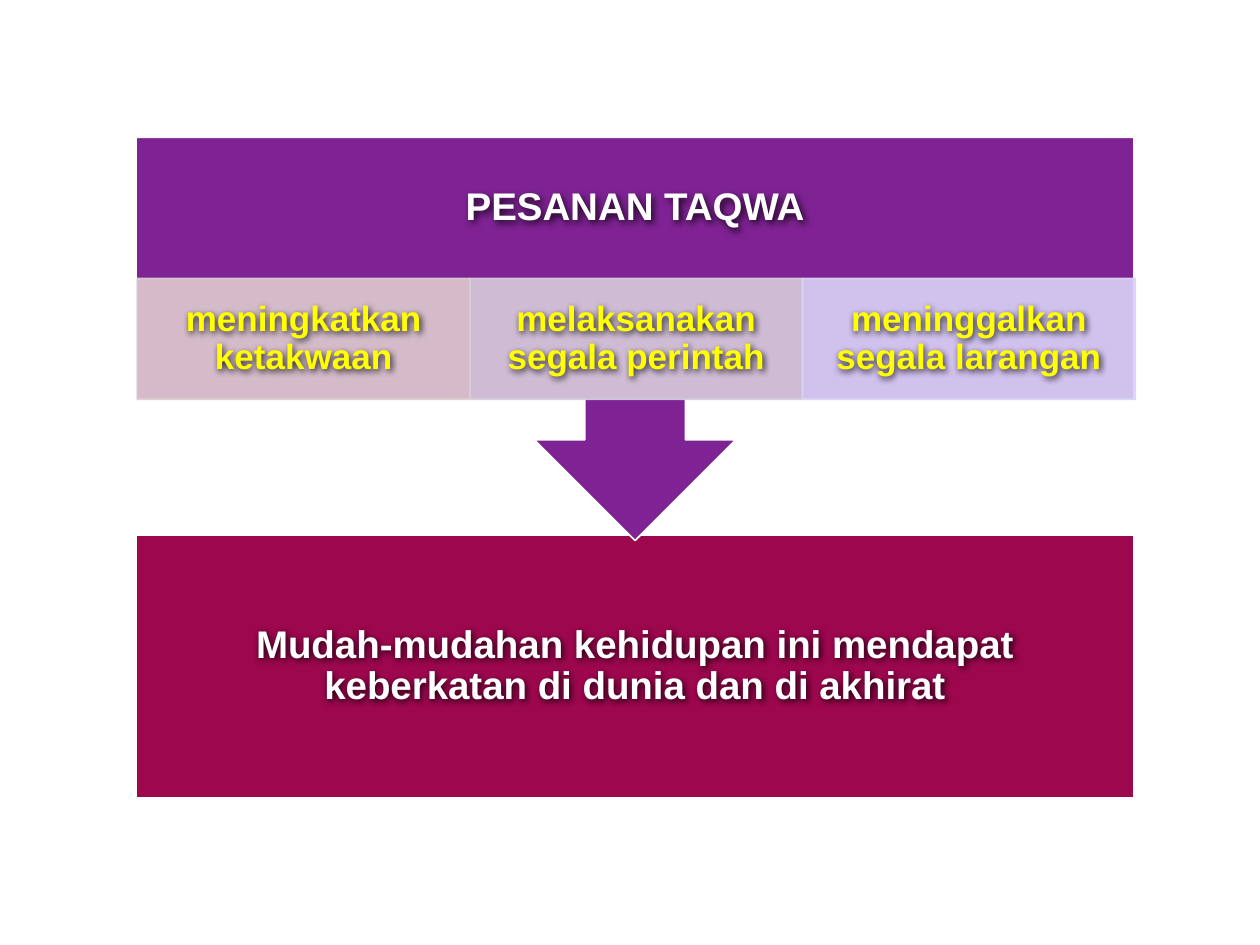
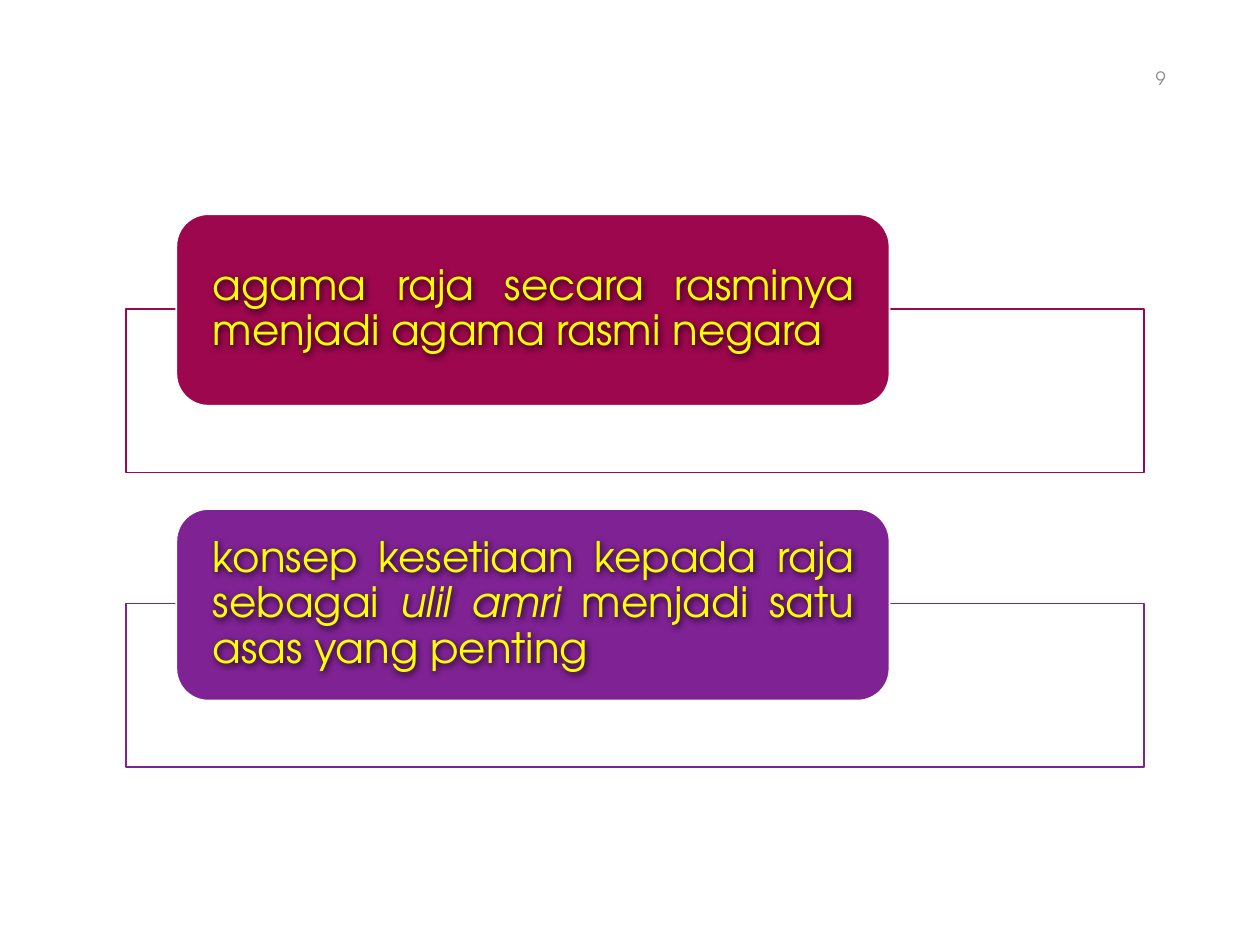
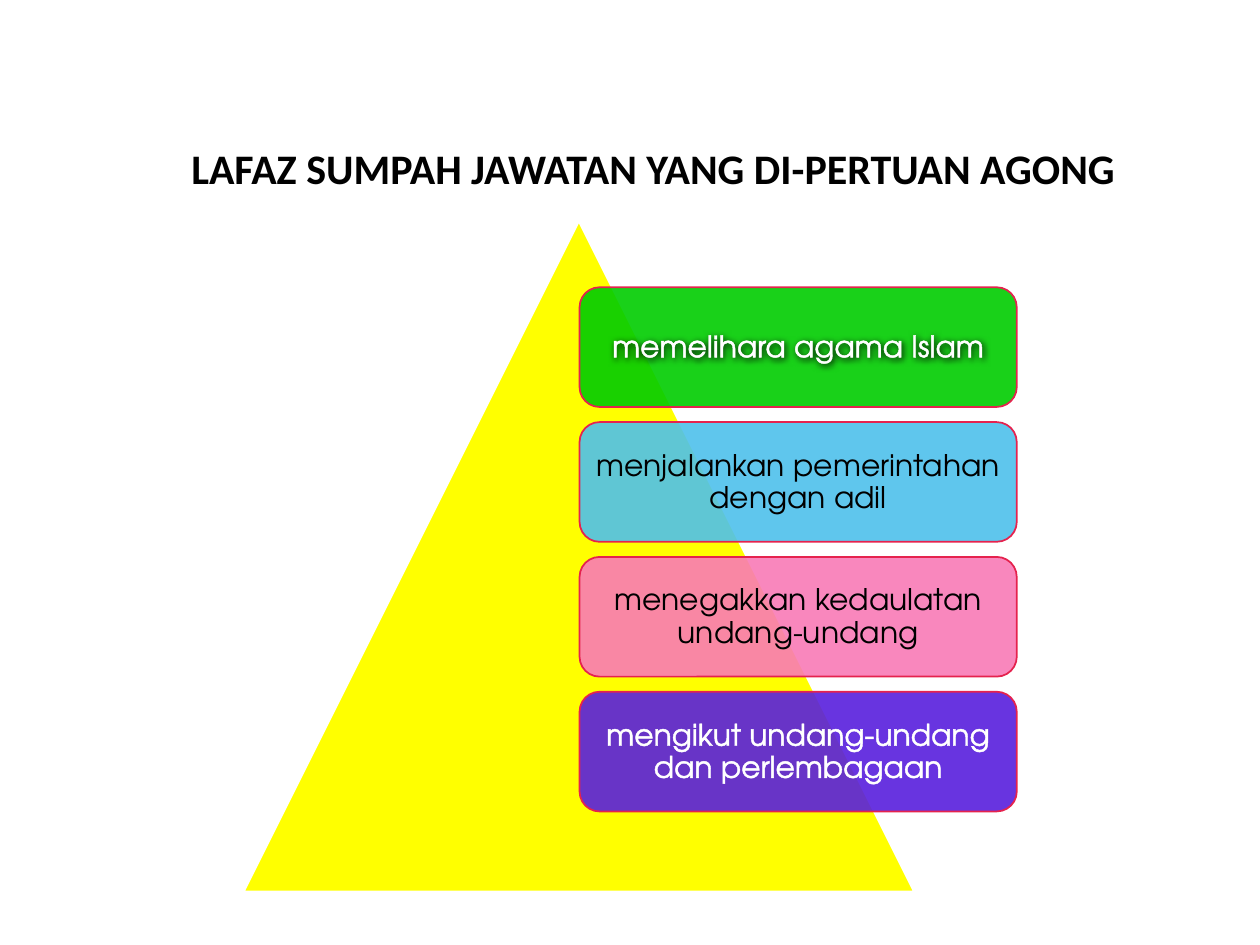
from lxml.etree import SubElement
from pptx import Presentation
from pptx.dml.color import RGBColor
from pptx.enum.shapes import MSO_SHAPE
from pptx.enum.text import MSO_ANCHOR, PP_ALIGN
from pptx.oxml.ns import qn
from pptx.util import Emu, Pt

# Shared style: 100 px to the inch
PX = 9144
WHITE = RGBColor(0xFF, 0xFF, 0xFF)
BLACK = RGBColor(0x00, 0x00, 0x00)
YELLOW = RGBColor(0xFF, 0xFF, 0x00)
PURPLE = RGBColor(0x7F, 0x22, 0x94)
CRIMSON = RGBColor(0x9D, 0x07, 0x4E)
RED = RGBColor(0xE5, 0x22, 0x4E)
GREY = RGBColor(0x8C, 0x8C, 0x8C)
DUSTY_ROSE = RGBColor(0xDF, 0xCC, 0xD0)
MAUVE = RGBColor(0xD8, 0xCD, 0xDC)
LAVENDER = RGBColor(0xDB, 0xD3, 0xF7)
GREEN = RGBColor(0x00, 0xCC, 0x00)
SKY = RGBColor(0x4E, 0xC0, 0xEC)
PINK = RGBColor(0xF9, 0x7B, 0xB6)
VIOLET = RGBColor(0x58, 0x1E, 0xDD)

ROUND_FONT = "TeX Gyre Adventor"
HEADING = {"name": "Arial", "size": Pt(22), "bold": True}
STEP = {"name": "Arial", "size": Pt(20), "bold": True}
STATEMENT = {"name": ROUND_FONT, "size": Pt(24)}
OATH = {"name": ROUND_FONT, "size": Pt(17)}
PAGE_NUMBER = {"name": ROUND_FONT, "size": Pt(10.5)}
TITLE = {"name": "Calibri", "size": Pt(24), "bold": True}


class Deck:
    """Holds the presentation, the current slide and the element styles."""

    def __init__(self, width, height):
        self.deck = Presentation()
        self.deck.slide_width = Emu(width * PX)
        self.deck.slide_height = Emu(height * PX)
        self.page = None

    def new_page(self):
        self.page = self.deck.slides.add_slide(self.deck.slide_layouts[6])

    def panel(self, kind, area, fill, line=WHITE, weight=1, opacity=100, rotation=0):
        shape = self.page.shapes.add_shape(kind, *(Emu(v * PX) for v in area))
        shape.shadow.inherit = False
        shape.rotation = rotation
        shape.fill.solid()
        shape.fill.fore_color.rgb = fill
        shape.line.color.rgb = line
        shape.line.width = Pt(weight)
        if opacity < 100:
            parts = [shape.fill] + ([shape.line.fill] if line == fill else [])
            for part in parts:
                self.set_opacity(part.fore_color, shape, opacity)

    @staticmethod
    def set_opacity(color, shape, opacity):
        for node in shape._element.spPr.iter(qn("a:srgbClr")):
            if node.get("val") == str(color.rgb) and len(node) == 0:
                SubElement(node, qn("a:alpha"), val=str(opacity * 1000))

    def label(self, area, spans, style, color, align=PP_ALIGN.CENTER, pad=(10, 5),
              anchor=MSO_ANCHOR.MIDDLE, spacing=0.9, wrap=True, outline=None,
              shadow=False):
        box = self.page.shapes.add_textbox(*(Emu(v * PX) for v in area))
        side, end = (Emu(v * PX) for v in pad)
        frame_format = {"word_wrap": wrap, "vertical_anchor": anchor,
                        "margin_left": side, "margin_right": side,
                        "margin_top": end, "margin_bottom": end}
        for name, value in frame_format.items():
            setattr(box.text_frame, name, value)
        para = box.text_frame.paragraphs[0]
        para.alignment = align
        para.line_spacing = spacing
        for text, extra in spans:
            span = para.add_run()
            span.text = text
            for name, value in {**style, **extra}.items():
                setattr(span.font, name, value)
            span.font.color.rgb = color
            if outline is not None:
                self.outline_text(span, color, outline)
        if shadow:
            self.shade_text(box)

    @staticmethod
    def outline_text(span, color, weight):
        properties = span.font._element
        line = SubElement(properties, qn("a:ln"), w=str(int(Pt(weight))))
        fill = SubElement(line, qn("a:solidFill"))
        SubElement(fill, qn("a:srgbClr"), val=str(color))
        properties.insert(0, line)

    @staticmethod
    def shade_text(box):
        effects = SubElement(box._element.spPr, qn("a:effectLst"))
        shade = SubElement(effects, qn("a:outerShdw"), blurRad=str(int(Pt(4))),
                           dist=str(int(Pt(1.5))), dir="3600000", algn="tl",
                           rotWithShape="0")
        color = SubElement(shade, qn("a:srgbClr"), val=str(BLACK))
        SubElement(color, qn("a:alpha"), val="80000")


def build_message(deck):
    deck.new_page()
    # Result
    result = (108, 425, 792, 208)
    deck.panel(MSO_SHAPE.RECTANGLE, result, CRIMSON)
    deck.label(result, [("Mudah-mudahan kehidupan ini mendapat keberkatan "
                         "di dunia dan di akhirat", {})],
               HEADING, WHITE, pad=(17, 17), shadow=True)
    # Heading with arrow down to the result
    deck.panel(MSO_SHAPE.UP_ARROW_CALLOUT, (108, 109, 792, 320), PURPLE, rotation=180)
    deck.label((108, 109, 792, 112), [("PESANAN TAQWA", {})],
               HEADING, WHITE, pad=(17, 17), shadow=True)
    # Three steps
    steps = [("meningkatkan ketakwaan", DUSTY_ROSE),
             ("melaksanakan segala perintah", MAUVE),
             ("meninggalkan segala larangan", LAVENDER)]
    for column, (text, fill) in enumerate(steps):
        area = (109 + column * 264, 221, 264, 96)
        deck.panel(MSO_SHAPE.RECTANGLE, area, fill, line=fill, opacity=90)
        deck.label(area, [(text, {})], STEP, YELLOW, pad=(16, 3),
                   outline=0.52, shadow=True)


def build_statements(deck):
    deck.new_page()
    deck.label((719, 42, 216, 40), [("9", {})], PAGE_NUMBER, GREY,
               align=PP_ALIGN.RIGHT, spacing=1.0)
    # Framed statements
    statements = [
        (CRIMSON, [("agama raja secara rasminya menjadi agama rasmi negara", {})]),
        (PURPLE, [("konsep kesetiaan kepada raja sebagai ", {}),
                  ("ulil amri", {"italic": True}),
                  (" menjadi satu asas yang penting", {})]),
    ]
    for row, (color, spans) in enumerate(statements):
        top = 170 + row * 234
        deck.panel(MSO_SHAPE.RECTANGLE, (100, top + 75, 808, 130), WHITE,
                   line=color, opacity=90)
        deck.panel(MSO_SHAPE.ROUNDED_RECTANGLE, (140, top, 566, 152), color)
        deck.label((148, top + 7, 551, 137), spans, STATEMENT, YELLOW,
                   align=PP_ALIGN.JUSTIFY, pad=(21, 0), outline=0.75, shadow=True)


def build_oath(deck):
    deck.new_page()
    deck.panel(MSO_SHAPE.ISOSCELES_TRIANGLE, (193, 175, 533, 533), YELLOW, weight=1.5)
    # Oath cards
    oaths = [("memelihara agama Islam", GREEN, WHITE, 0, True),
             ("menjalankan pemerintahan dengan adil", SKY, BLACK, None, False),
             ("menegakkan kedaulatan undang-undang", PINK, BLACK, None, False),
             ("mengikut undang-undang dan perlembagaan", VIOLET, WHITE, 0, False)]
    for row, (text, fill, color, outline, shadow) in enumerate(oaths):
        top = 228 + row * 107
        deck.panel(MSO_SHAPE.ROUNDED_RECTANGLE, (460, top, 347, 95), fill,
                   line=RED, opacity=90)
        deck.label((465, top + 5, 337, 86), [(text, {})], OATH, color,
                   pad=(7, 7), outline=outline, shadow=shadow)
    # Title
    deck.label((142, 108, 767, 50), [("LAFAZ SUMPAH JAWATAN YANG DI-PERTUAN AGONG", {})],
               TITLE, BLACK, align=PP_ALIGN.LEFT, anchor=MSO_ANCHOR.TOP,
               spacing=1.0, wrap=False)


def main():
    deck = Deck(1000, 750)
    for build in (build_message, build_statements, build_oath):
        build(deck)
    deck.deck.save("out.pptx")


if __name__ == "__main__":
    main()
